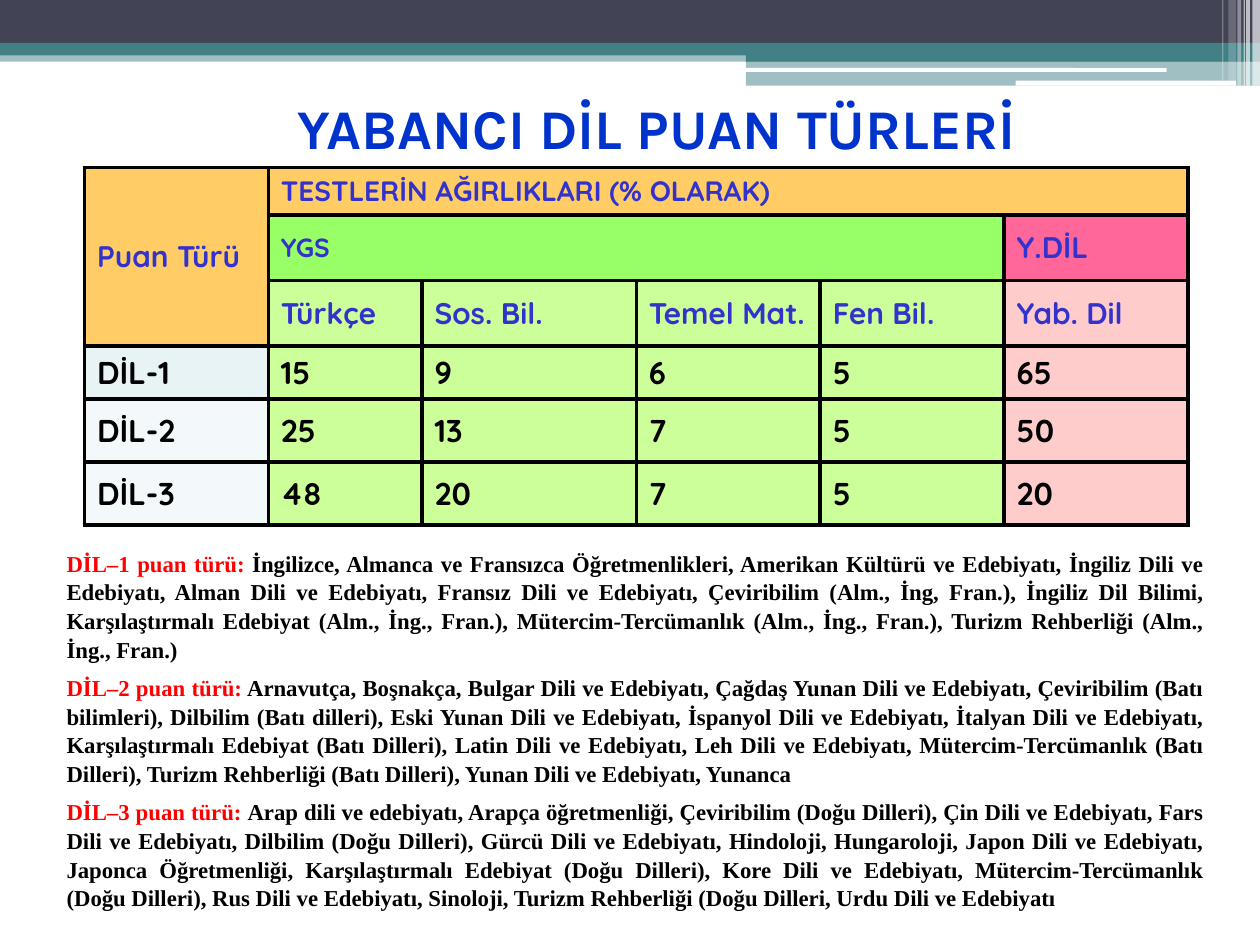
from lxml import etree
from pptx import Presentation
from pptx.dml.color import RGBColor
from pptx.enum.shapes import MSO_SHAPE
from pptx.enum.text import MSO_ANCHOR, MSO_AUTO_SIZE, PP_ALIGN
from pptx.oxml.ns import qn
from pptx.util import Inches, Pt

RECT, ROUND = MSO_SHAPE.RECTANGLE, MSO_SHAPE.ROUNDED_RECTANGLE
MIDDLE = MSO_ANCHOR.MIDDLE
CENTER, JUSTIFY = PP_ALIGN.CENTER, PP_ALIGN.JUSTIFY
W, H = 10, 7.5

TEAL, WHITE, BLACK, RED, BLUE = "438086", "FFFFFF", "000000", "FF0000", "3333CC"
GOLD, LIME, PALE, PINK, ROSE = "FFCC66", "99FF66", "CCFF99", "FF6699", "FFCCCC"

# Header bands: left, top, width, height, colour, opacity %
BANDS = [
    (0, 0.4, W, 0.09, TEAL, 50),
    (0, 0, W, 0.34, "424456", 100),
    (0, 0.34, W, 0.1, TEAL, 100),
    (5.92, 0.39, 4.08, 0.1, TEAL, 100),
    (5.92, 0.48, 4.08, 0.2, TEAL, 50),
]
PILLS = [(5.91, 0.54, 3.35, 0.03, WHITE, 100), (8.06, 0.64, 1.75, 0.04, WHITE, 100)]
# Stripes at the right edge: left, width, height, opacity %
STRIPES = [
    (9.94, 0.06, 0.68, 65), (9.89, 0.03, 0.68, 65), (9.87, 0.01, 0.68, 60),
    (9.82, 0.03, 0.68, 40), (9.75, 0.06, 0.64, 20), (9.7, 0.01, 0.64, 30),
]

TITLE = "YABANCI DİL PUAN TÜRLERİ"
COLS = [1.46, 1.22, 1.7, 1.46, 1.46, 1.46]
ROWS = [0.37, 0.52, 0.52, 0.42, 0.5, 0.5]
# Heading cells: row, column, rows, columns, text, size, fill
HEADS = [
    (0, 0, 3, 1, "Puan Türü", 17, GOLD),
    (0, 1, 1, 5, "TESTLERİN AĞIRLIKLARI (% OLARAK)", 16, GOLD),
    (1, 1, 1, 4, "YGS", 15, LIME),
    (1, 5, 1, 1, "Y.DİL", 17, PINK),
]
TESTS = ["Türkçe", "Sos. Bil.", "Temel Mat.", "Fen Bil.", "Yab. Dil"]
SCORES = [
    ("DİL-1", 15, 9, 6, 5, 65),
    ("DİL-2", 25, 13, 7, 5, 50),
    ("DİL-3", 48, 20, 7, 5, 20),
]
LABELS = ["E7F3F4", "F3F9FA", "F3F9FA"]

NOTES = [
    ("DİL–1 puan türü:",
     " İngilizce, Almanca ve Fransızca Öğretmenlikleri, Amerikan Kültürü ve Edebiyatı, "
     "İngiliz Dili ve Edebiyatı, Alman Dili ve Edebiyatı, Fransız Dili ve Edebiyatı, "
     "Çeviribilim (Alm., İng, Fran.), İngiliz Dil Bilimi, Karşılaştırmalı Edebiyat "
     "(Alm., İng., Fran.), Mütercim-Tercümanlık (Alm., İng., Fran.), Turizm Rehberliği "
     "(Alm., İng., Fran.)"),
    ("DİL–2 puan türü:",
     " Arnavutça, Boşnakça, Bulgar Dili ve Edebiyatı, Çağdaş Yunan Dili ve Edebiyatı, "
     "Çeviribilim (Batı bilimleri), Dilbilim (Batı dilleri), Eski Yunan Dili ve Edebiyatı, "
     "İspanyol Dili ve Edebiyatı, İtalyan Dili ve Edebiyatı, Karşılaştırmalı Edebiyat "
     "(Batı Dilleri), Latin Dili ve Edebiyatı, Leh Dili ve Edebiyatı, Mütercim-Tercümanlık "
     "(Batı Dilleri), Turizm Rehberliği (Batı Dilleri), Yunan Dili ve Edebiyatı, Yunanca"),
    ("DİL–3 puan türü: ",
     "Arap dili ve edebiyatı, Arapça öğretmenliği, Çeviribilim (Doğu Dilleri), Çin Dili ve "
     "Edebiyatı, Fars Dili ve Edebiyatı, Dilbilim (Doğu Dilleri), Gürcü Dili ve Edebiyatı, "
     "Hindoloji, Hungaroloji, Japon Dili ve Edebiyatı, Japonca Öğretmenliği, Karşılaştırmalı "
     "Edebiyat (Doğu Dilleri), Kore Dili ve Edebiyatı, Mütercim-Tercümanlık (Doğu Dilleri), "
     "Rus Dili ve Edebiyatı, Sinoloji, Turizm Rehberliği (Doğu Dilleri, Urdu Dili ve Edebiyatı"),
]


def paint(fill, color, alpha=100):
    fill.solid()
    fill.fore_color.rgb = RGBColor.from_string(color)
    if alpha < 100:
        node = fill._xPr.find(qn("a:solidFill"))[0]
        etree.SubElement(node, qn("a:alpha"), val=str(alpha * 1000))


def write(para, text, size=18, color=BLACK, font="Quicksand", align=None):
    run = para.add_run()
    run.text = text
    run.font.size, run.font.name, run.font.bold = Pt(size), font, True
    run.font.color.rgb = RGBColor.from_string(color)
    if align is not None:
        para.alignment = align


def block(slide, kind, x, y, w, h, color, alpha):
    shape = slide.shapes.add_shape(kind, *map(Inches, (x, y, w, h)))
    shape.shadow.inherit = False
    shape.line.fill.background()
    paint(shape.fill, color, alpha)


def border(cell):
    props = cell._tc.get_or_add_tcPr()
    for i, side in enumerate(("lnL", "lnR", "lnT", "lnB")):
        line = etree.Element(qn("a:" + side), w=str(Pt(2.25)))
        fill = etree.SubElement(line, qn("a:solidFill"))
        etree.SubElement(fill, qn("a:srgbClr"), val=BLACK)
        props.insert(i, line)


def fill_cell(cell, text, size, color, back):
    cell.vertical_anchor = MIDDLE
    paint(cell.fill, back)
    write(cell.text_frame.paragraphs[0], str(text), size=size, color=color)


def add_grid(slide):
    frame = slide.shapes.add_table(len(ROWS), len(COLS), Inches(0.67), Inches(1.33),
                                   Inches(sum(COLS)), Inches(sum(ROWS)))
    grid = frame.table
    for col, width in zip(grid.columns, COLS):
        col.width = Inches(width)
    for row, height in zip(grid.rows, ROWS):
        row.height = Inches(height)
    for r, c, down, across, text, size, back in HEADS:
        cell = grid.cell(r, c)
        if down * across > 1:
            cell.merge(grid.cell(r + down - 1, c + across - 1))
        fill_cell(cell, text, size, BLUE, back)
    backs = [PALE] * 4 + [ROSE]
    for c, (text, back) in enumerate(zip(TESTS, backs), 1):
        fill_cell(grid.cell(2, c), text, 17, BLUE, back)
    for r, (score, label) in enumerate(zip(SCORES, LABELS), 3):
        for c, (text, back) in enumerate(zip(score, [label] + backs)):
            fill_cell(grid.cell(r, c), text, 18, BLACK, back)
    for cell in grid.iter_cells():
        border(cell)


def add_notes(slide):
    box = slide.shapes.add_textbox(*map(Inches, (0.43, 4.3, 9.21, 2.89)))
    frame = box.text_frame
    frame.word_wrap = True
    frame.auto_size = MSO_AUTO_SIZE.SHAPE_TO_FIT_TEXT
    for i, (lead, body) in enumerate(NOTES):
        para = frame.add_paragraph() if i else frame.paragraphs[0]
        para.line_spacing = 1.05
        para.space_before = Pt(5.5 if i else 0)
        for text, color in ((lead, RED), (body, BLACK)):
            write(para, text, size=13, color=color, font="Times New Roman", align=JUSTIFY)


def main():
    deck = Presentation()
    deck.slide_width, deck.slide_height = Inches(W), Inches(H)
    slide = deck.slides.add_slide(deck.slide_layouts[5])

    # Header decoration
    for band in BANDS:
        block(slide, RECT, *band)
    for pill in PILLS:
        block(slide, ROUND, *pill)
    for x, w, h, alpha in STRIPES:
        block(slide, RECT, x, 0, w, h, WHITE, alpha)

    # Title
    title = slide.shapes.title
    title.left, title.top, title.width, title.height = map(Inches, (1.41, 0.55, 7.61, 0.92))
    title.text_frame.vertical_anchor = MIDDLE
    write(title.text_frame.paragraphs[0], TITLE, size=32, color="0033CC",
          font="Karla", align=CENTER)

    add_grid(slide)
    add_notes(slide)
    deck.save("out.pptx")


if __name__ == "__main__":
    main()
